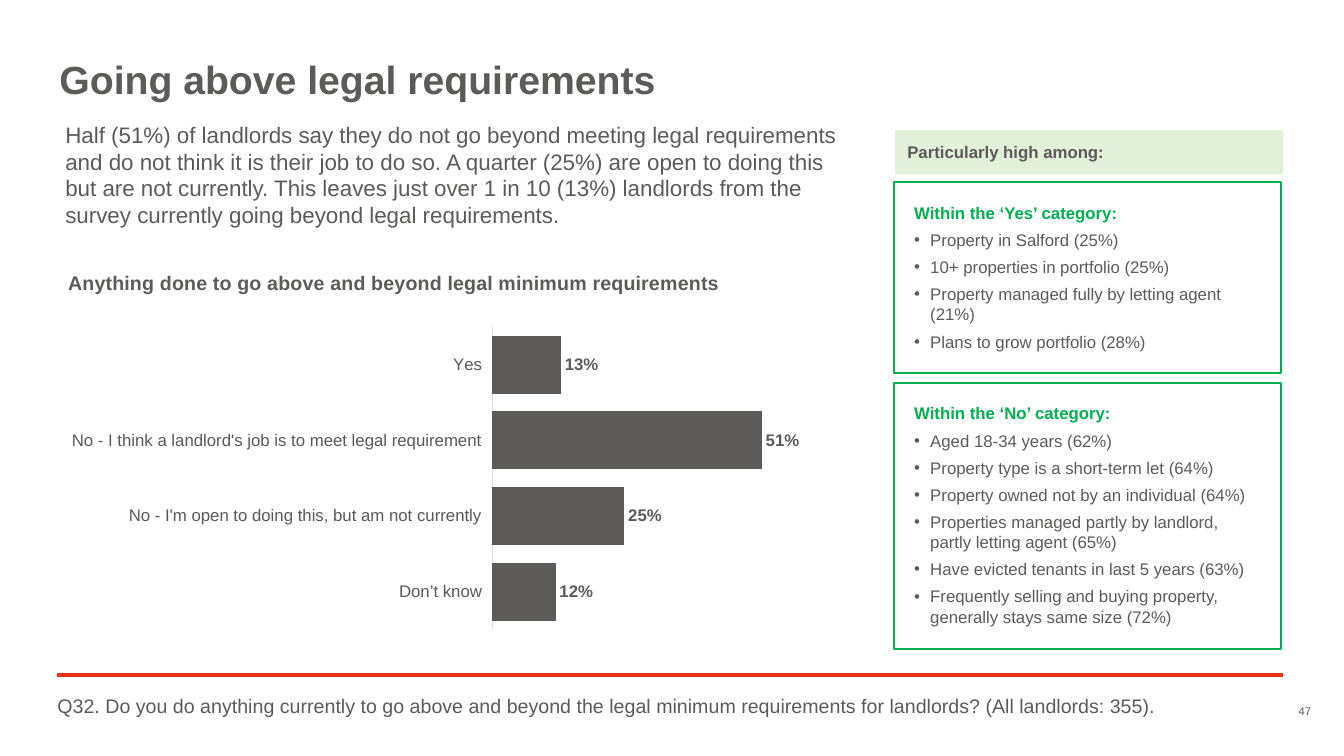
from lxml.etree import SubElement
from pptx import Presentation
from pptx.chart.data import CategoryChartData
from pptx.dml.color import RGBColor
from pptx.enum.chart import XL_CHART_TYPE as ChartType, XL_LABEL_POSITION as LabelPosition
from pptx.enum.chart import XL_TICK_LABEL_POSITION as TickLabels, XL_TICK_MARK as TickMark
from pptx.enum.shapes import MSO_CONNECTOR as Connector, MSO_SHAPE as Shape
from pptx.enum.text import MSO_ANCHOR as Anchor, PP_ALIGN as Align
from pptx.oxml import parse_xml
from pptx.oxml.ns import nsdecls, qn
from pptx.util import Pt

COLORS = {"text": "5C5B5A", "axis_text": "595959", "axis": "D9D9D9",
          "green": "00B050", "pale_green": "E2F0D9", "red": "E33317"}
FONT = "Arial"

RESPONSES = {
    "Yes": 0.13,
    "No - I think a landlord's job is to meet legal requirement": 0.51,
    "No - I'm open to doing this, but am not currently": 0.25,
    "Don’t know": 0.12,
}
YES_GROUPS = [
    "Property in Salford (25%)",
    "10+ properties in portfolio (25%)",
    "Property managed fully by letting agent (21%)",
    "Plans to grow portfolio (28%)",
]
NO_GROUPS = [
    "Aged 18-34 years (62%)",
    "Property type is a short-term let (64%)",
    "Property owned not by an individual (64%)",
    "Properties managed partly by landlord, partly letting agent (65%)",
    "Have evicted tenants in last 5 years (63%)",
    "Frequently selling and buying property, generally stays same size (72%)",
]


def rgb(name):
    return RGBColor.from_string(COLORS[name])


def style_font(font, size, color="text", bold=False):
    font.name, font.size, font.bold = FONT, Pt(size), bold
    font.color.rgb = rgb(color)


def write(paragraph, text, size=12, color="text", bold=False, align=Align.LEFT,
          line_spacing=None, space_after=0):
    run = paragraph.add_run()
    run.text = text
    style_font(run.font, size, color, bold)
    paragraph.alignment = align
    paragraph.line_spacing = line_spacing
    paragraph.space_after = Pt(space_after)


def set_frame(shape, insets, anchor=Anchor.TOP):
    """Wrap the text; insets are left, top, right, bottom in points."""
    frame = shape.text_frame
    frame.word_wrap = True
    frame.vertical_anchor = anchor
    (frame.margin_left, frame.margin_top,
     frame.margin_right, frame.margin_bottom) = map(Pt, insets)
    return frame


def add_text(slide, box, text, insets=(0, 0, 0, 0), anchor=Anchor.TOP, **text_format):
    shape = slide.shapes.add_textbox(*map(Pt, box))
    write(set_frame(shape, insets, anchor).paragraphs[0], text, **text_format)


def add_panel(slide, box, inset, fill=None, line=None):
    """Add a rectangle and return its text frame."""
    shape = slide.shapes.add_shape(Shape.RECTANGLE, *map(Pt, box))
    shape.shadow.inherit = False
    if fill:
        shape.fill.solid()
        shape.fill.fore_color.rgb = rgb(fill)
    else:
        shape.fill.background()
    if line:
        shape.line.color.rgb = rgb(line)
        shape.line.width = Pt(1.5)
    else:
        shape.line.fill.background()
    return set_frame(shape, [inset] * 4)


def make_bullet(paragraph, indent=11.5):
    properties = paragraph._p.get_or_add_pPr()
    properties.set("marL", str(Pt(indent)))
    properties.set("indent", str(-Pt(indent)))
    SubElement(properties, qn("a:buFont"), typeface=FONT)
    SubElement(properties, qn("a:buChar"), char="•")


def add_category_panel(slide, top, height, heading, groups):
    frame = add_panel(slide, (638.6, top, 276.5, height), 14.4, line="green")
    write(frame.paragraphs[0], heading, color="green", bold=True, space_after=5)
    for group in groups:
        paragraph = frame.add_paragraph()
        write(paragraph, group, space_after=5)
        make_bullet(paragraph)


def add_rule(slide, left, right, y):
    rule = slide.shapes.add_connector(Connector.STRAIGHT, Pt(left), Pt(y), Pt(right), Pt(y))
    rule.line.color.rgb = rgb("red")
    rule.line.width = Pt(3)
    SubElement(rule._element.spPr, qn("a:effectLst"))


def set_layout(parent, index, target="", **fractions):
    """Place a chart part by fractions of the chart's size."""
    for layout in parent.findall(qn("c:layout")):
        parent.remove(layout)
    inner = f'<c:layoutTarget val="{target}"/>' if target else ""
    modes = "".join(f'<c:{key}Mode val="edge"/>' for key in "xy")
    values = "".join(f'<c:{key} val="{value}"/>' for key, value in fractions.items())
    parent.insert(index, parse_xml(
        f'<c:layout {nsdecls("c")}><c:manualLayout>{inner}{modes}{values}'
        '</c:manualLayout></c:layout>'))


def add_response_chart(slide, box):
    data = CategoryChartData(number_format="0%")
    data.categories = list(RESPONSES)
    data.add_series("Series 1", list(RESPONSES.values()))
    chart = slide.shapes.add_chart(ChartType.BAR_CLUSTERED, *map(Pt, box), data).chart
    style_font(chart.font, 12)
    chart.has_legend = False

    chart.has_title = True
    write(chart.chart_title.text_frame.paragraphs[0],
          "Anything done to go above and beyond legal minimum requirements",
          size=14, bold=True)
    set_layout(chart.chart_title._element, 1, x=0.0, y=0.03)
    set_layout(chart._chartSpace.chart.plotArea, 0, "inner", x=0.481, y=0.19, w=0.357, h=0.81)

    category_axis = chart.category_axis
    category_axis.reverse_order = True
    category_axis.major_tick_mark = TickMark.NONE
    category_axis.tick_label_position = TickLabels.LOW
    category_axis.format.line.color.rgb = rgb("axis")
    category_axis.format.line.width = Pt(0.75)
    style_font(category_axis.tick_labels.font, 12, "axis_text")

    value_axis = chart.value_axis
    value_axis.visible = False
    value_axis.has_major_gridlines = False
    value_axis.minimum_scale, value_axis.maximum_scale = 0, 0.6

    plot = chart.plots[0]
    plot.gap_width = 30
    plot.vary_by_categories = False
    fill = plot.series[0].format.fill
    fill.solid()
    fill.fore_color.rgb = rgb("text")
    labels = plot.series[0].data_labels
    labels.show_value = True
    labels.number_format, labels.number_format_is_linked = "0%", False
    labels.position = LabelPosition.OUTSIDE_END
    style_font(labels.font, 12, bold=True)


def main():
    presentation = Presentation()
    presentation.slide_width, presentation.slide_height = Pt(960), Pt(540)
    slide = presentation.slides.add_slide(presentation.slide_layouts[6])

    add_text(slide, (908.6, 503.3, 28, 9.4), "47", anchor=Anchor.BOTTOM,
             size=8, align=Align.RIGHT)
    add_rule(slide, 41, 916.6, 482.4)
    add_text(slide, (42.5, 43.2, 874, 30.2), "Going above legal requirements",
             size=28, bold=True, line_spacing=0.9)
    add_text(slide, (39.6, 82.8, 581, 85),
             "Half (51%) of landlords say they do not go beyond meeting legal requirements "
             "and do not think it is their job to do so. A quarter (25%) are open to doing "
             "this but are not currently. This leaves just over 1 in 10 (13%) landlords from "
             "the survey currently going beyond legal requirements.",
             insets=(7.2, 3.6, 7.2, 3.6), size=16)
    add_response_chart(slide, (46.1, 182.9, 635, 267.1))

    header = add_panel(slide, (639.4, 92.9, 277.2, 31.7), 8.64, fill="pale_green")
    write(header.paragraphs[0], "Particularly high among:", bold=True)
    add_category_panel(slide, 130.3, 136.1, "Within the ‘Yes’ category:", YES_GROUPS)
    add_category_panel(slide, 273.6, 190.1, "Within the ‘No’ category:", NO_GROUPS)

    add_text(slide, (41, 493.9, 875.5, 23),
             "Q32. Do you do anything currently to go above and beyond the legal minimum "
             "requirements for landlords? (All landlords: 355).",
             insets=(0, 3.6, 0, 3.6), size=14, line_spacing=0.9)
    presentation.save("out.pptx")


if __name__ == "__main__":
    main()
